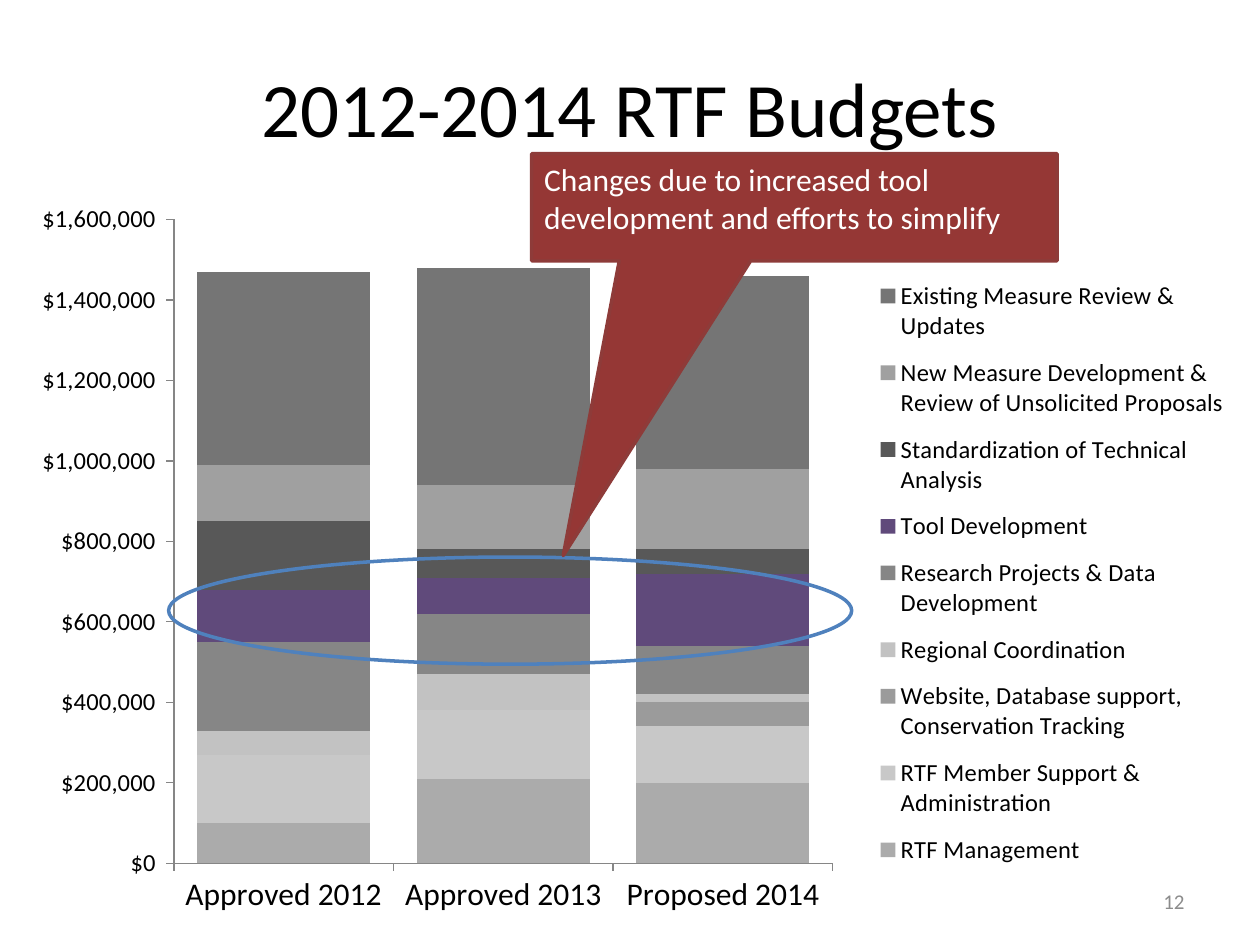
from lxml import etree
from pptx import Presentation
from pptx.chart.data import CategoryChartData
from pptx.dml.color import RGBColor
from pptx.enum.chart import XL_CHART_TYPE, XL_LEGEND_POSITION, XL_TICK_MARK
from pptx.enum.shapes import MSO_SHAPE
from pptx.enum.text import MSO_ANCHOR, PP_ALIGN
from pptx.oxml.ns import qn
from pptx.util import Cm, Pt

STACKED = XL_CHART_TYPE.COLUMN_STACKED
LEGEND_RIGHT = XL_LEGEND_POSITION.RIGHT
TICK_OUTSIDE = XL_TICK_MARK.OUTSIDE
ELLIPSE = MSO_SHAPE.OVAL
CALLOUT = MSO_SHAPE.RECTANGULAR_CALLOUT
TOP, MIDDLE = MSO_ANCHOR.TOP, MSO_ANCHOR.MIDDLE
LEFT, CENTER, RIGHT = PP_ALIGN.LEFT, PP_ALIGN.CENTER, PP_ALIGN.RIGHT

FONT = "Calibri"
CATEGORIES = ["Approved 2012", "Approved 2013", "Proposed 2014"]
BUDGETS = [
    ("RTF Management", (100000, 210000, 200000), "ABABAB"),
    ("RTF Member Support & Administration", (170000, 170000, 140000), "C8C8C8"),
    ("Website, Database support, Conservation Tracking", (0, 0, 60000), "9B9B9B"),
    ("Regional Coordination", (60000, 90000, 20000), "C2C2C2"),
    ("Research Projects & Data Development", (220000, 150000, 120000), "868686"),
    ("Tool Development", (130000, 90000, 180000), "604A7B"),
    ("Standardization of Technical Analysis", (170000, 70000, 60000), "585858"),
    ("New Measure Development & Review of Unsolicited Proposals",
     (140000, 160000, 200000), "A0A0A0"),
    ("Existing Measure Review & Updates", (480000, 540000, 480000), "757575"),
]


def color(value):
    """Turn a hex string into a colour."""
    return RGBColor.from_string(value)


def set_values(target, values):
    """Set each attribute named in a dict of format values."""
    for name, value in values.items():
        setattr(target, name, value)


def set_font(font, size, hex_color):
    """Give a font the slide's typeface, a size and a colour."""
    set_values(font, {"name": FONT, "size": Pt(size), "bold": False})
    font.color.rgb = color(hex_color)


def set_line(line, hex_color, width):
    """Give an outline its colour and width."""
    line.color.rgb = color(hex_color)
    line.width = Pt(width)


def set_layout(element, position, fractions, inner=False):
    """Fix a chart part at left, top, width and height fractions of the chart."""
    for old_layout in element.findall(qn("c:layout")):
        element.remove(old_layout)
    layout = etree.Element(qn("c:layout"))
    manual = etree.SubElement(layout, qn("c:manualLayout"))
    settings = [("layoutTarget", "inner")] if inner else []
    settings += [("xMode", "edge"), ("yMode", "edge")]
    settings += zip("xywh", fractions)
    for name, value in settings:
        etree.SubElement(manual, qn(f"c:{name}")).set("val", str(value))
    element.insert(position, layout)


def write_text(shape, text, size, hex_color, alignment, anchor):
    """Write one wrapped paragraph into a shape."""
    frame = shape.text_frame
    set_values(frame, {"word_wrap": True, "vertical_anchor": anchor})
    paragraph = frame.paragraphs[0]
    paragraph.alignment = alignment
    run = paragraph.add_run()
    run.text = text
    set_font(run.font, size, hex_color)


def add_label(slide, box, *text_format):
    """Place a text box in the given box."""
    write_text(slide.shapes.add_textbox(*map(Cm, box)), *text_format)


def format_axis(axis, size):
    """Style an axis with outside ticks and a thin grey line."""
    set_values(axis, {
        "has_major_gridlines": False,
        "major_tick_mark": TICK_OUTSIDE,
    })
    set_font(axis.tick_labels.font, size, "000000")
    set_line(axis.format.line, "868686", 0.75)


def add_budget_chart(slide, box):
    """Place the stacked budget columns and their legend in the given box."""
    data = CategoryChartData()
    data.categories = CATEGORIES
    for name, values, _ in BUDGETS:
        data.add_series(name, values)
    chart = slide.shapes.add_chart(STACKED, *map(Cm, box), data).chart
    set_values(chart, {"has_title": False, "has_legend": True})
    set_font(chart.font, 18, "000000")

    plot = chart.plots[0]
    set_values(plot, {"gap_width": 27, "overlap": 100, "vary_by_categories": False})
    for series, (_, _, hex_color) in zip(plot.series, BUDGETS):
        series.format.fill.solid()
        series.format.fill.fore_color.rgb = color(hex_color)

    format_axis(chart.category_axis, 18)
    format_axis(chart.value_axis, 14)
    set_values(chart.value_axis, {
        "minimum_scale": 0, "maximum_scale": 1600000, "major_unit": 200000,
    })
    set_values(chart.value_axis.tick_labels, {
        "number_format": '"$"#,##0_);\\("$"#,##0\\)',
        "number_format_is_linked": False,
    })

    set_values(chart.legend, {"position": LEGEND_RIGHT, "include_in_layout": False})
    set_font(chart.legend.font, 14, "000000")
    plot_area = chart.element.find(f".//{qn('c:plotArea')}")
    legend = chart.element.find(f".//{qn('c:legend')}")
    set_layout(plot_area, 0, (0.138, 0.083, 0.523, 0.814), inner=True)
    set_layout(legend, 1, (0.69, 0.14, 0.29, 0.78))


def add_highlight(slide, box):
    """Ring the tool development band with an ellipse filling the box."""
    ellipse = slide.shapes.add_shape(ELLIPSE, *map(Cm, box))
    ellipse.shadow.inherit = False
    ellipse.fill.background()
    set_line(ellipse.line, "4F81BD", 2)


def add_callout(slide, box, text):
    """Place the callout in the box, pointing down at the ellipse."""
    callout = slide.shapes.add_shape(CALLOUT, *map(Cm, box))
    callout.shadow.inherit = False
    callout.adjustments[0], callout.adjustments[1] = -0.44, 3.25
    callout.fill.solid()
    callout.fill.fore_color.rgb = color("953735")
    set_line(callout.line, "8E3B39", 2)
    write_text(callout, text, 18, "FFFFFF", LEFT, TOP)


def build_budget_slide(presentation):
    """Lay out the budget slide from back to front."""
    slide = presentation.slides.add_slide(presentation.slide_layouts[6])
    add_budget_chart(slide, (0, 3.1, 25.4, 15.95))
    add_label(slide, (1.27, 0.56, 22.86, 3.18),
              "2012-2014 RTF Budgets", 44, "000000", CENTER, MIDDLE)
    add_highlight(slide, (3.4, 11.23, 13.77, 2.16))
    add_callout(slide, (10.72, 3.1, 10.59, 2.16),
                "Changes due to increased tool development and efforts to simplify")
    add_label(slide, (18.21, 17.65, 5.92, 1.02), "12", 12, "8C8C8C", RIGHT, MIDDLE)


def main():
    """Build and save the presentation."""
    presentation = Presentation()
    set_values(presentation, {"slide_width": Cm(25.4), "slide_height": Cm(19.05)})
    build_budget_slide(presentation)
    presentation.save("out.pptx")


if __name__ == "__main__":
    main()
